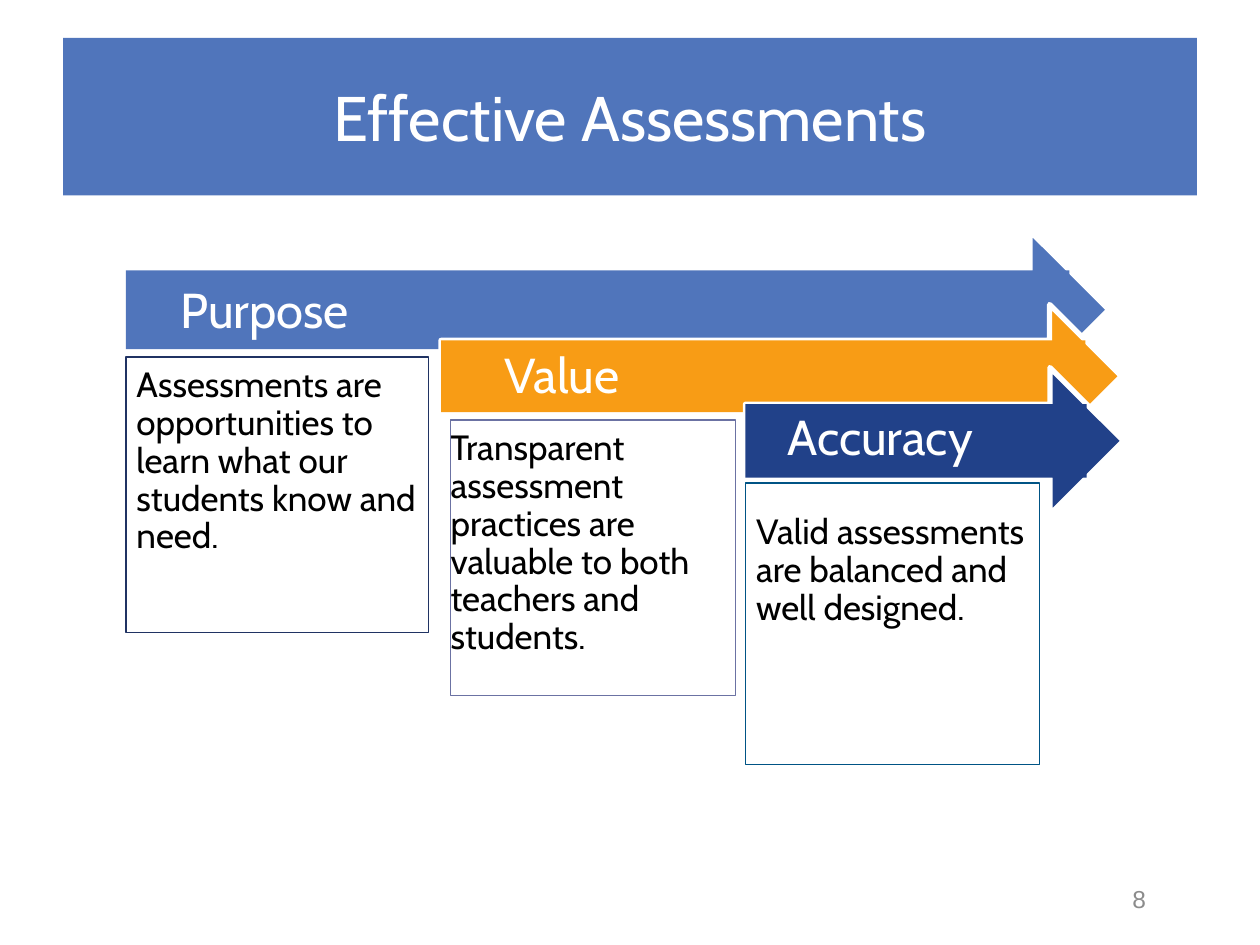
from dataclasses import dataclass

from pptx import Presentation
from pptx.dml.color import RGBColor
from pptx.enum.shapes import MSO_SHAPE
from pptx.enum.text import MSO_ANCHOR, MSO_AUTO_SIZE, PP_ALIGN
from pptx.util import Pt


@dataclass(frozen=True)
class Theme:
    font: str = "Cabin"
    number_font: str = "Arial"
    blue: str = "5075BB"
    orange: str = "F89C15"
    navy: str = "214189"
    white: str = "FFFFFF"
    black: str = "000000"
    grey: str = "8C8C8C"
    title_size: int = 36
    label_size: int = 28
    body_size: int = 20
    number_size: int = 14


THEME = Theme()
INSETS = (7.2, 3.6, 7.2, 3.6)


@dataclass(frozen=True)
class Step:
    """One arrow with its label and description; boxes are (left, top, width, height)."""
    name: str
    text: str
    color: str
    border: str
    arrow: tuple
    label: tuple
    box: tuple
    insets: tuple


STEPS = (
    Step("Purpose",
         "Assessments are opportunities to learn what our students know and need.",
         THEME.blue, "203363", (72, 132, 561.6, 90), (96, 156, 156, 41),
         (72, 204, 172.8, 157.5), (6, 6, 6, 6)),
    Step("Value",
         "Transparent assessment practices are valuable to both teachers and students.",
         THEME.orange, "6B72A3", (252, 174, 388.8, 82), (281, 193.5, 121.5, 41),
         (257.5, 240, 163, 157.5), (0, 6, 11.5, 6)),
    Step("Accuracy",
         "Valid assessments are balanced and well designed.",
         THEME.navy, "005485", (426, 210, 216, 84), (443, 229, 163.5, 41),
         (426, 276, 168, 161), (6, 18, 6, 6)),
)


def points(values):
    return [Pt(value) for value in values]


def write(shape, text, size, color, font=THEME.font, align=PP_ALIGN.LEFT,
          anchor=MSO_ANCHOR.TOP, insets=INSETS, spacing=1.0):
    tf = shape.text_frame
    tf.word_wrap = True
    tf.auto_size = MSO_AUTO_SIZE.NONE
    tf.vertical_anchor = anchor
    tf.margin_left, tf.margin_top, tf.margin_right, tf.margin_bottom = points(insets)
    tf.text = text
    p = tf.paragraphs[0]
    p.alignment = align
    p.line_spacing = spacing
    p.font.name = font
    p.font.size = Pt(size)
    p.font.color.rgb = RGBColor.from_string(color)


def add_block(slide, kind, bounds, fill, line=None, line_width=0.75):
    sp = slide.shapes.add_shape(kind, *points(bounds))
    sp.shadow.inherit = False
    sp.fill.solid()
    sp.fill.fore_color.rgb = RGBColor.from_string(fill)
    if line:
        sp.line.color.rgb = RGBColor.from_string(line)
        sp.line.width = Pt(line_width)
    else:
        sp.line.fill.background()
    return sp


def add_text(slide, bounds, text, size, color, **options):
    sp = slide.shapes.add_textbox(*points(bounds))
    write(sp, text, size, color, **options)


def add_title(slide, text):
    sp = slide.shapes.title
    sp.left, sp.top, sp.width, sp.height = points((36, 21.6, 648, 90))
    sp.fill.solid()
    sp.fill.fore_color.rgb = RGBColor.from_string(THEME.blue)
    write(sp, text, THEME.title_size, THEME.white,
          align=PP_ALIGN.CENTER, anchor=MSO_ANCHOR.MIDDLE)


def add_arrow(slide, bounds, color):
    """Outlined arrow whose shaft is covered by a plain bar reaching into the head."""
    left, top, width, height = bounds
    quarter = height / 4
    add_block(slide, MSO_SHAPE.RIGHT_ARROW, bounds, color, THEME.white, 3)
    add_block(slide, MSO_SHAPE.RECTANGLE,
              (left, top + quarter, width - quarter, height / 2), color)


def add_step(slide, step):
    box = add_block(slide, MSO_SHAPE.RECTANGLE, step.box, THEME.white, step.border)
    write(box, step.text, THEME.body_size, THEME.black,
          insets=step.insets, spacing=0.9)
    add_arrow(slide, step.arrow, step.color)
    add_text(slide, step.label, step.name, THEME.label_size, THEME.white)


def main():
    prs = Presentation()
    prs.slide_width, prs.slide_height = Pt(720), Pt(540)
    slide = prs.slides.add_slide(prs.slide_layouts[5])
    add_title(slide, "Effective Assessments")
    for step in STEPS:
        add_step(slide, step)
    add_text(slide, (612, 499, 78, 29), "8", THEME.number_size, THEME.grey,
             font=THEME.number_font, align=PP_ALIGN.CENTER, anchor=MSO_ANCHOR.MIDDLE)
    prs.save("out.pptx")


if __name__ == "__main__":
    main()
